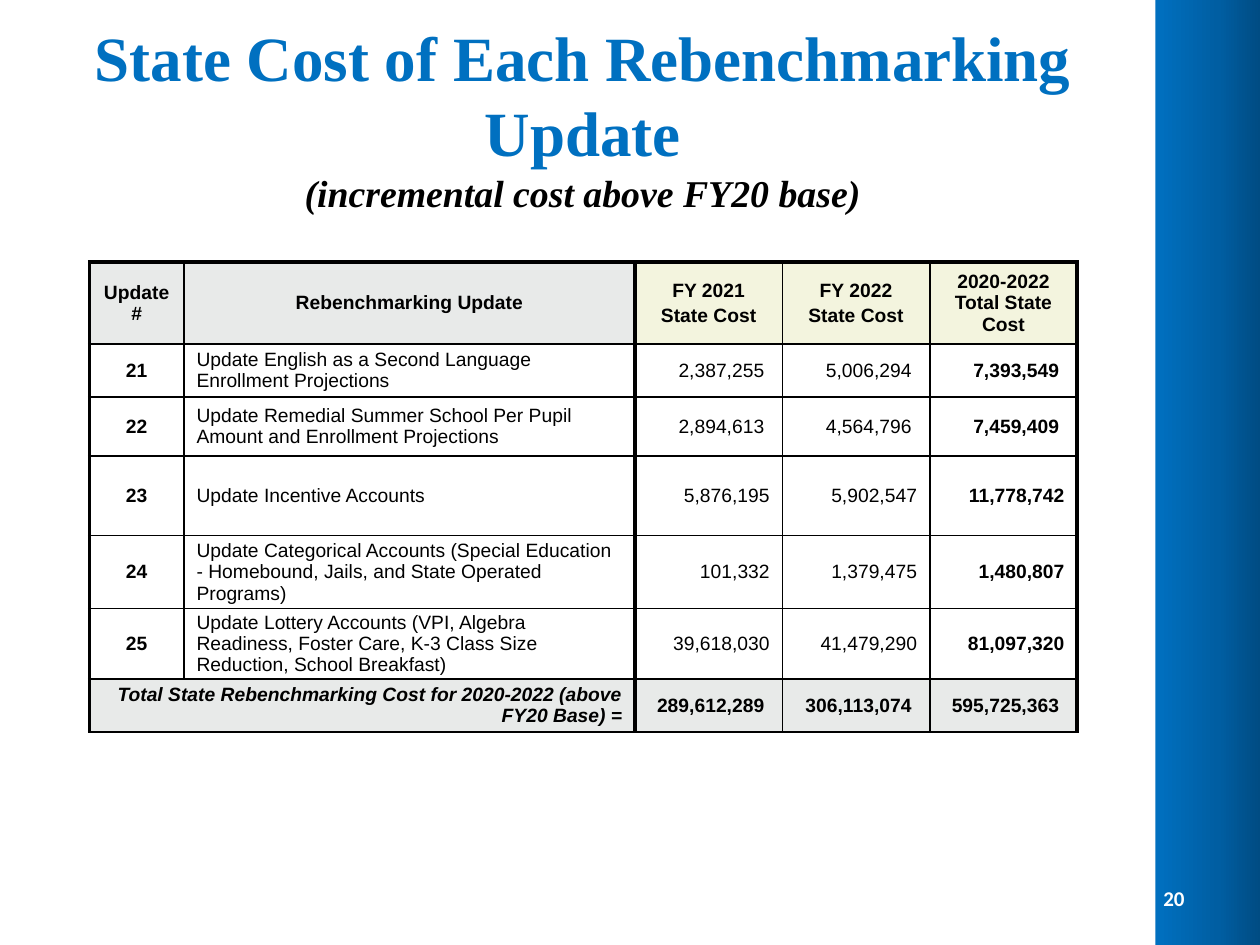
import copy

import pptx
import pptx.util
import pptx.dml.color
import pptx.enum.shapes
import pptx.enum.text
import pptx.oxml.ns
from lxml import etree

Inches = pptx.util.Inches
Pt = pptx.util.Pt
RGBColor = pptx.dml.color.RGBColor
PP_ALIGN = pptx.enum.text.PP_ALIGN
MIDDLE = pptx.enum.text.MSO_ANCHOR.MIDDLE
qn = pptx.oxml.ns.qn

BLACK = RGBColor(0x00, 0x00, 0x00)
WHITE = RGBColor(0xFF, 0xFF, 0xFF)
BLUE = RGBColor(0x00, 0x70, 0xC0)
MID_BLUE = RGBColor(0x00, 0x5E, 0xA2)
DARK_BLUE = RGBColor(0x00, 0x42, 0x72)
GRAY = RGBColor(0xE8, 0xEA, 0xE9)
CREAM = RGBColor(0xF3, 0xF4, 0xDE)

THIN, THICK = Pt(1), Pt(2.25)
COLUMN_WIDTHS = [0.75, 3.58, 1.17, 1.17, 1.17]
ROW_HEIGHTS = [0.51, 0.42, 0.47, 0.63, 0.58, 0.56, 0.42]
ROWS = [
    ["Update #", "Rebenchmarking Update", "FY 2021\nState Cost", "FY 2022\nState Cost",
     "2020-2022 Total State Cost"],
    ["21", "Update English as a Second Language Enrollment Projections",
     "2,387,255 ", "5,006,294 ", "7,393,549 "],
    ["22", "Update Remedial Summer School Per Pupil Amount and Enrollment Projections",
     "2,894,613 ", "4,564,796 ", "7,459,409 "],
    ["23", "Update Incentive Accounts", "5,876,195", "5,902,547", "11,778,742"],
    ["24", "Update Categorical Accounts (Special Education - Homebound, Jails, "
     "and State Operated Programs)", "101,332", "1,379,475", "1,480,807"],
    ["25", "Update Lottery Accounts (VPI, Algebra Readiness, Foster Care, "
     "K-3 Class Size Reduction, School Breakfast)", "39,618,030", "41,479,290", "81,097,320"],
    ["Total State Rebenchmarking Cost for 2020-2022 (above FY20 Base) =", "",
     "289,612,289 ", "306,113,074 ", "595,725,363 "],
]
LAST_ROW = len(ROWS) - 1
LAST_COLUMN = len(COLUMN_WIDTHS) - 1


def style_font(font, name, size, color, bold=True, italic=False):
    font.name = name
    font.size = Pt(size)
    font.color.rgb = color
    font.bold = bold
    font.italic = italic


def set_borders(cell, widths):
    """Draw black cell borders; widths are left, right, top, bottom."""
    properties = cell._tc.get_or_add_tcPr()
    for side, width in zip("LRTB", widths):
        line = etree.SubElement(properties, qn(f"a:ln{side}"), w=str(width))
        fill = etree.SubElement(line, qn("a:solidFill"))
        etree.SubElement(fill, qn("a:srgbClr"), val=str(BLACK))


presentation = pptx.Presentation()
presentation.slide_width = Inches(10)
presentation.slide_height = Inches(7.5)
slide = presentation.slides.add_slide(presentation.slide_layouts[6])

# Side band, fading from blue to dark blue
band = slide.shapes.add_shape(pptx.enum.shapes.MSO_SHAPE.RECTANGLE,
                              Inches(9.17), Inches(0), Inches(1), Inches(7.5))
band.shadow.inherit = False
band.line.fill.background()
band.fill.gradient()
band.fill.gradient_angle = 0
stop_list = band._element.spPr.find(qn("a:gradFill")).find(qn("a:gsLst"))
stop_list.insert(1, copy.deepcopy(stop_list[0]))
for stop, position, color in zip(band.fill.gradient_stops, [0, 0.5, 1],
                                 [BLUE, MID_BLUE, DARK_BLUE]):
    stop.position = position
    stop.color.rgb = color

# Slide number
number_box = slide.shapes.add_textbox(Inches(9.08), Inches(6.93), Inches(0.42), Inches(0.4))
number_box.text_frame.word_wrap = True
number_box.text_frame.vertical_anchor = MIDDLE
paragraph = number_box.text_frame.paragraphs[0]
paragraph.text = "20"
paragraph.alignment = PP_ALIGN.RIGHT
style_font(paragraph.runs[0].font, "Calibri", 12, WHITE)

# Cost table
table = slide.shapes.add_table(len(ROWS), len(COLUMN_WIDTHS), Inches(0.71), Inches(2.08),
                               Inches(sum(COLUMN_WIDTHS)), Inches(sum(ROW_HEIGHTS))).table
table.horz_banding = False
for column, width in zip(table.columns, COLUMN_WIDTHS):
    column.width = Inches(width)
for row, height in zip(table.rows, ROW_HEIGHTS):
    row.height = Inches(height)
table.cell(LAST_ROW, 0).merge(table.cell(LAST_ROW, 1))

for r, texts in enumerate(ROWS):
    is_header, is_total = r == 0, r == LAST_ROW
    for c, text in enumerate(texts):
        cell = table.cell(r, c)
        set_borders(cell, [THICK if c in (0, 2) else THIN,
                           THICK if c in (1, LAST_COLUMN) else THIN,
                           THICK if is_header else THIN,
                           THIN])
        cell.fill.solid()
        if is_header:
            cell.fill.fore_color.rgb = GRAY if c < 2 else CREAM
        else:
            cell.fill.fore_color.rgb = GRAY if is_total else WHITE
            cell.margin_top = cell.margin_bottom = 0
        cell.vertical_anchor = MIDDLE
        if cell.is_spanned:
            continue

        cell.text_frame.text = text
        if is_header or (c == 0 and not is_total):
            alignment = PP_ALIGN.CENTER
        else:
            alignment = PP_ALIGN.LEFT if c == 1 else PP_ALIGN.RIGHT
        bold = is_header or is_total or c in (0, LAST_COLUMN)
        for index, paragraph in enumerate(cell.text_frame.paragraphs):
            paragraph.alignment = alignment
            if index:
                paragraph.space_before = Pt(2.2)
            style_font(paragraph.runs[0].font, "Arial", 11, BLACK, bold, is_total and c == 0)

# Title and subtitle
title_box = slide.shapes.add_textbox(Inches(0.5), Inches(0.3), Inches(8.25), Inches(1.25))
title_box.text_frame.word_wrap = True
title_box.text_frame.vertical_anchor = MIDDLE
paragraph = title_box.text_frame.paragraphs[0]
paragraph.text = "State Cost of Each Rebenchmarking Update\v(incremental cost above FY20 base)"
paragraph.alignment = PP_ALIGN.CENTER
title, subtitle = paragraph.runs
style_font(title.font, "Times New Roman", 36, BLUE)
style_font(subtitle.font, "Times New Roman", 21.6, BLACK, italic=True)

presentation.save("out.pptx")
